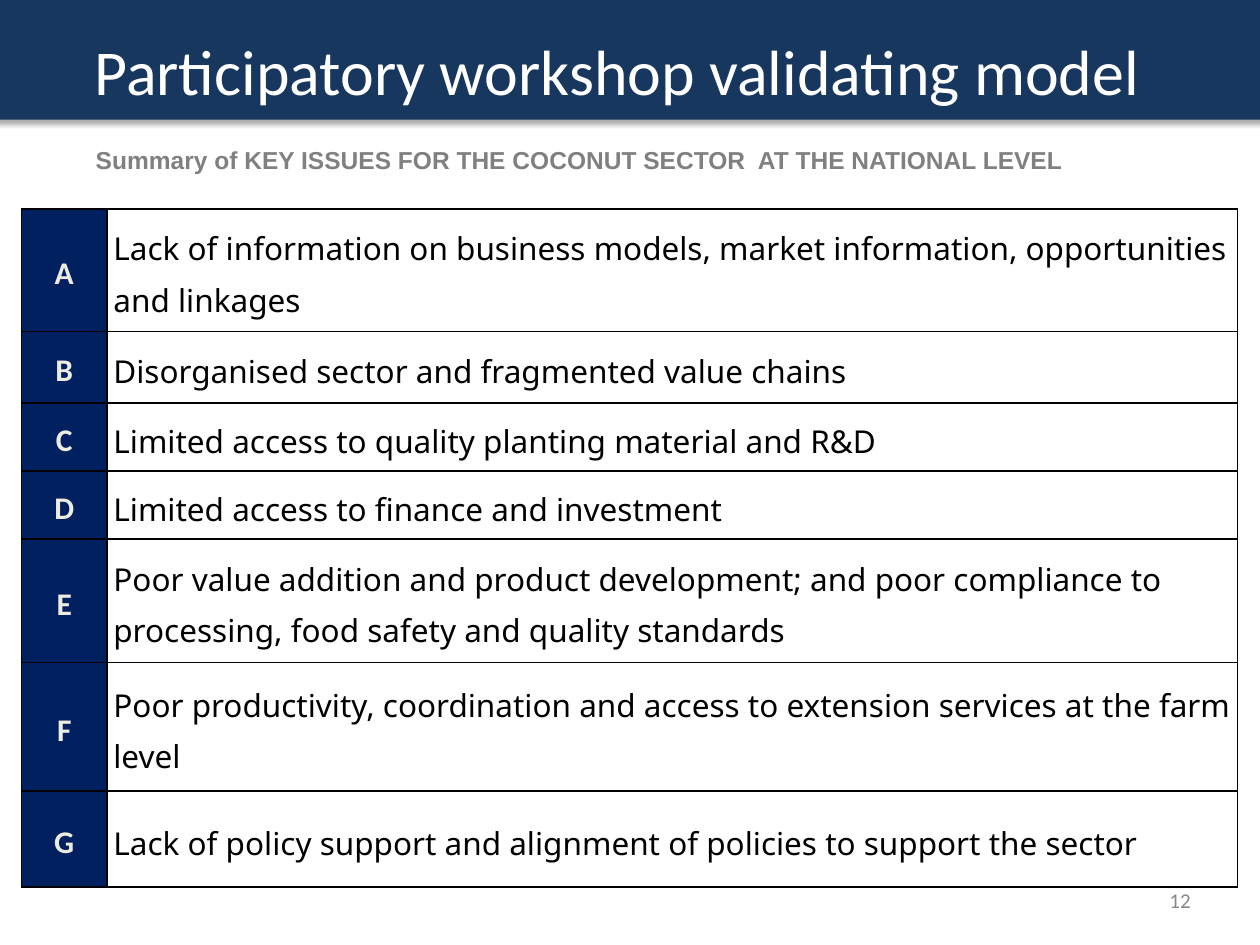
from lxml.etree import SubElement
from pptx import Presentation
from pptx.dml.color import RGBColor
from pptx.enum.text import MSO_ANCHOR, PP_ALIGN
from pptx.oxml import parse_xml
from pptx.oxml.ns import nsdecls, qn
from pptx.util import Inches, Pt

TITLE = "Participatory workshop validating model"
SUBTITLE = "Summary of KEY ISSUES FOR THE COCONUT SECTOR  AT THE NATIONAL LEVEL"
PAGE_NUMBER = "12"
ISSUES = [  # letter, issue, row height
    ("A", "Lack of information on business models, market information, "
          "opportunities and linkages", 0.97),
    ("B", "Disorganised sector and fragmented value chains", 0.57),
    ("C", "Limited access to quality planting material and R&D", 0.54),
    ("D", "Limited access to finance and investment", 0.54),
    ("E", "Poor value addition and product development; and poor compliance to "
          "processing, food safety and quality standards", 0.98),
    ("F", "Poor productivity, coordination and access to extension services "
          "at the farm level", 1.02),
    ("G", "Lack of policy support and alignment of policies to support the sector", 0.76),
]
COLUMN_WIDTHS = (0.68, 8.97)
INSET = Inches(0.05)


def rgb(value):
    return RGBColor.from_string(value)


def set_insets(target):
    target.margin_left = target.margin_right = INSET
    target.margin_top = target.margin_bottom = INSET


def write(frame, text, size, font_name, color, bold=False, align=PP_ALIGN.LEFT):
    """Fill the first paragraph of a text frame and return it."""
    paragraph = frame.paragraphs[0]
    paragraph.text = text
    paragraph.alignment = align
    font = paragraph.font
    font.size, font.name, font.bold = Pt(size), font_name, bold
    font.color.rgb = rgb(color)
    return paragraph


def add_label(slide, box, wrap, anchor):
    frame = slide.shapes.add_textbox(*map(Inches, box)).text_frame
    set_insets(frame)
    frame.word_wrap, frame.vertical_anchor = wrap, anchor
    return frame


def add_borders(cell, color="000000", width=1):
    properties = cell._tc.get_or_add_tcPr()
    for side in ("lnL", "lnR", "lnT", "lnB"):
        line = SubElement(properties, qn(f"a:{side}"), w=str(Pt(width)))
        SubElement(SubElement(line, qn("a:solidFill")), qn("a:srgbClr"), val=color)


def add_title_band(slide):
    band = slide.shapes.title
    band.left, band.top, band.width, band.height = map(Inches, (-0.05, 0, 10.07, 0.95))
    band.fill.solid()
    band.fill.fore_color.rgb = rgb("17375E")
    band._element.spPr.append(parse_xml(
        f'<a:effectLst {nsdecls("a")}>'
        f'<a:outerShdw blurRad="{Pt(3)}" dist="{Pt(1.8)}" dir="5400000" rotWithShape="0">'
        '<a:srgbClr val="000000"><a:alpha val="35000"/></a:srgbClr>'
        '</a:outerShdw></a:effectLst>'))
    frame = band.text_frame
    set_insets(frame)
    frame.margin_right, frame.margin_bottom = Inches(0.23), Inches(0.08)
    frame.word_wrap, frame.vertical_anchor = True, MSO_ANCHOR.BOTTOM
    heading = write(frame, TITLE, 36.5, "Calibri", "FFFFFF", align=PP_ALIGN.CENTER)
    heading.line_spacing = 0.9


def add_issue_table(slide):
    height = sum(row_height for *_, row_height in ISSUES)
    table = slide.shapes.add_table(
        len(ISSUES), len(COLUMN_WIDTHS), Inches(0.17), Inches(1.66),
        Inches(sum(COLUMN_WIDTHS)), Inches(height)).table
    table.first_row = table.horz_banding = False
    for column, width in zip(table.columns, COLUMN_WIDTHS):
        column.width = Inches(width)
    for row, (letter, issue, row_height) in zip(table.rows, ISSUES):
        row.height = Inches(row_height)
        letter_cell, issue_cell = row.cells
        for cell in (letter_cell, issue_cell):
            set_insets(cell)
            cell.vertical_anchor = MSO_ANCHOR.MIDDLE
            add_borders(cell)
            cell.text_frame.paragraphs[0].line_spacing = 1.2
        letter_cell.fill.solid()
        letter_cell.fill.fore_color.rgb = rgb("002060")
        issue_cell.fill.background()
        write(letter_cell.text_frame, letter, 18, "Calibri", "EEECE1", True, PP_ALIGN.CENTER)
        write(issue_cell.text_frame, issue, 18, "Noto Sans", "000000")


def main():
    deck = Presentation()
    deck.slide_width, deck.slide_height = Inches(10), Inches(7.5)
    slide = deck.slides.add_slide(deck.slide_layouts[5])

    add_title_band(slide)
    subtitle = add_label(slide, (0.71, 1.1, 8.58, 0.41), True, MSO_ANCHOR.TOP)
    write(subtitle, SUBTITLE, 14, "Arial", "808080", True).space_before = Pt(3)
    add_issue_table(slide)
    number = add_label(slide, (9.22, 7, 0.28, 0.29), False, MSO_ANCHOR.MIDDLE)
    write(number, PAGE_NUMBER, 12, "Calibri", "888888", align=PP_ALIGN.RIGHT)

    deck.save("out.pptx")


if __name__ == "__main__":
    main()
